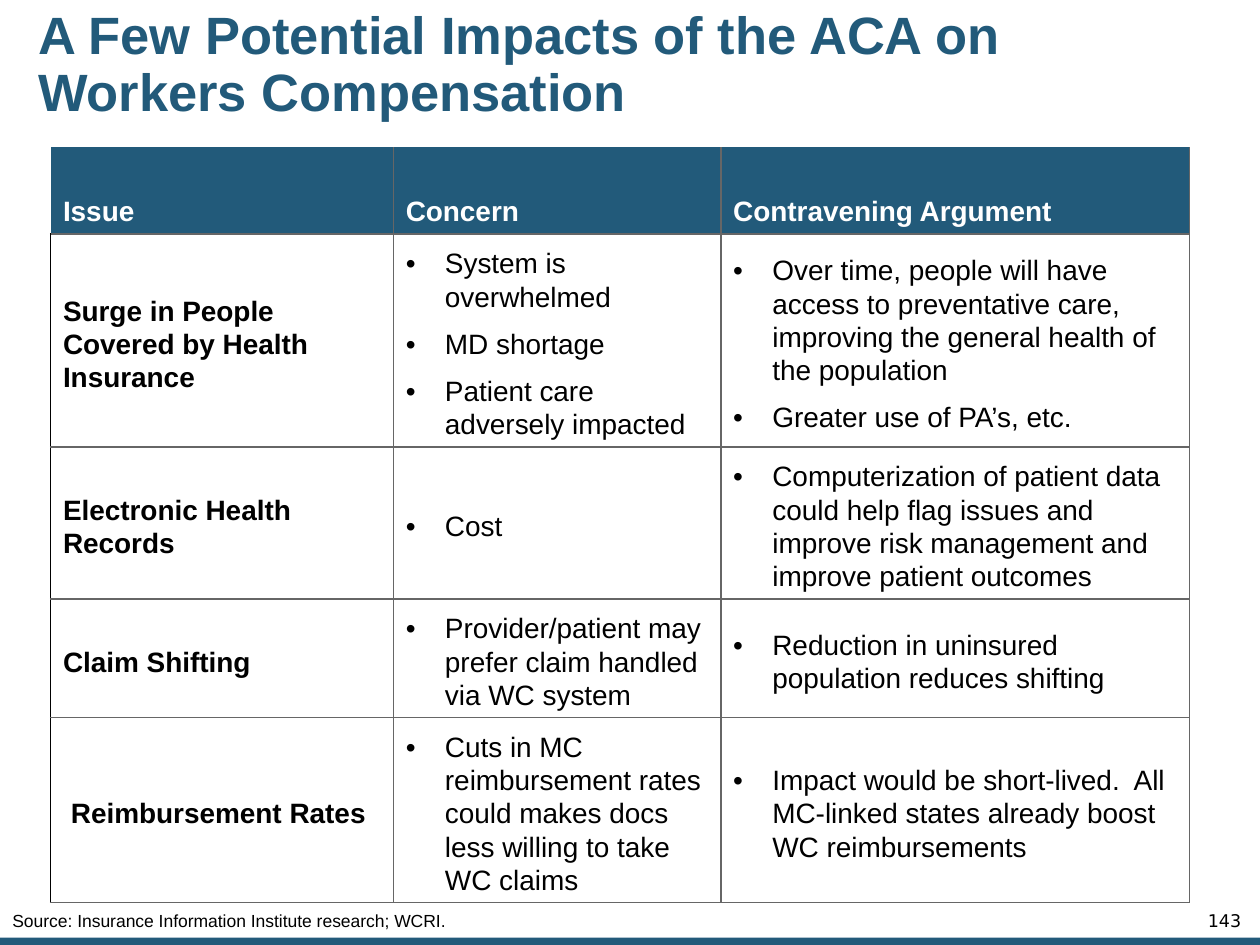
from lxml.etree import SubElement
from pptx import Presentation
from pptx.dml.color import RGBColor
from pptx.enum.shapes import MSO_SHAPE
from pptx.enum.text import MSO_ANCHOR as Anchor, PP_ALIGN as Align
from pptx.oxml.ns import qn
from pptx.util import Cm, Pt

COLORS = {"teal": "225A7A", "grey": "666666", "black": "000000", "white": "FFFFFF"}


def style_text(para, size, color, bold=False, name="Arial"):
    for span in para.runs:
        span.font.size = Pt(size)
        span.font.name = name
        span.font.bold = bold
        span.font.color.rgb = RGBColor.from_string(COLORS[color])


def set_border(cell, side, color):
    """Draw a 1 pt line on side L, R, T or B; no line if color is None."""
    line = SubElement(cell._tc.get_or_add_tcPr(), qn(f"a:ln{side}"), w=str(Pt(1)))
    if color is None:
        SubElement(line, qn("a:noFill"))
    else:
        fill = SubElement(line, qn("a:solidFill"))
        SubElement(fill, qn("a:srgbClr"), val=COLORS[color])


deck = Presentation()
deck.slide_width, deck.slide_height = Cm(25.4), Cm(19.05)
page = deck.slides.add_slide(deck.slide_layouts[6])

footer_bar = page.shapes.add_shape(MSO_SHAPE.RECTANGLE, 0, Cm(18.9), Cm(25.4), Cm(0.15))
footer_bar.shadow.inherit = False
footer_bar.fill.solid()
footer_bar.fill.fore_color.rgb = RGBColor.from_string(COLORS["teal"])
footer_bar.line.fill.background()

# Issue table: one list of bullets per concern and per argument
headings = ["Issue", "Concern", "Contravening Argument"]
issues = [
    ("Surge in People Covered by Health Insurance",
     ["System is overwhelmed", "MD shortage", "Patient care adversely impacted"],
     ["Over time, people will have access to preventative care, "
      "improving the general health of the population",
      "Greater use of PA’s, etc."]),
    ("Electronic Health Records",
     ["Cost"],
     ["Computerization of patient data could help flag issues and "
      "improve risk management and improve patient outcomes"]),
    ("Claim Shifting",
     ["Provider/patient may prefer claim handled via WC system"],
     ["Reduction in uninsured population reduces shifting"]),
    ("Reimbursement Rates",
     ["Cuts in MC reimbursement rates could makes docs less willing to take WC claims"],
     ["Impact would be short-lived.  All MC-linked states already boost "
      "WC reimbursements"]),
]
column_widths = [6.91, 6.6, 9.45]
row_heights = [1.75, 4.29, 3.06, 2.39, 3.73]
rows = [[[heading] for heading in headings]]
rows += [[[issue], concerns, arguments] for issue, concerns, arguments in issues]

table = page.shapes.add_table(len(rows), len(headings), Cm(1.02), Cm(2.97),
                              Cm(sum(column_widths)), Cm(sum(row_heights))).table
for column, width in zip(table.columns, column_widths):
    column.width = Cm(width)
for row, height in zip(table.rows, row_heights):
    row.height = Cm(height)

for row_index, row in enumerate(rows):
    is_header = row_index == 0
    for column_index, lines in enumerate(row):
        cell = table.cell(row_index, column_index)
        left = "grey" if column_index else None if is_header else "black"
        top = None if is_header else "grey"
        for side, color in zip("LRTB", (left, "grey", top, "grey")):
            set_border(cell, side, color)
        cell.fill.solid()
        cell.fill.fore_color.rgb = RGBColor.from_string(
            COLORS["teal" if is_header else "white"])
        cell.vertical_anchor = Anchor.BOTTOM if is_header else Anchor.MIDDLE
        cell.margin_left = cell.margin_right = cell.margin_top = Cm(0.25)
        cell.margin_bottom = Cm(0.13)
        cell.text_frame.text = "\n".join(lines)

        is_bulleted = column_index > 0 and not is_header
        for number, para in enumerate(cell.text_frame.paragraphs):
            if is_bulleted:
                properties = para._p.get_or_add_pPr()
                properties.set("marL", str(Cm(0.79)))
                properties.set("indent", str(-Cm(0.79)))
                SubElement(properties, qn("a:buFont"), typeface="Arial")
                SubElement(properties, qn("a:buChar"), char="•")
            para.line_spacing = Pt(19)
            para.space_before = Pt(8 if number else 0)
            style_text(para, 16, "white" if is_header else "black", not is_bulleted)

# The last issue sits slightly further in
table.cell(len(issues), 0).margin_left = Cm(0.41)

captions = [
    (0, 9.73, "Source: Insurance Information Institute research; WCRI.", "Arial", Align.LEFT),
    (23.37, 1.9, "143", "DejaVu Sans", Align.RIGHT),
]
for left, width, text, font_name, alignment in captions:
    box = page.shapes.add_textbox(Cm(left), Cm(18.21), Cm(width), Cm(0.69))
    box.text_frame.word_wrap = True
    box.text_frame.vertical_anchor = Anchor.MIDDLE
    box.text_frame.text = text
    para = box.text_frame.paragraphs[0]
    para.alignment = alignment
    style_text(para, 10, "black", name=font_name)

title = page.shapes.add_textbox(Cm(0.64), Cm(0.2), Cm(20.9), Cm(2.26))
frame = title.text_frame
frame.word_wrap = True
frame.vertical_anchor = Anchor.MIDDLE
frame.margin_left = frame.margin_right = frame.margin_top = frame.margin_bottom = Cm(0.13)
frame.text = "A Few Potential Impacts of the ACA on Workers Compensation"
frame.paragraphs[0].line_spacing = 0.9
style_text(frame.paragraphs[0], 30, "teal", True)

deck.save("out.pptx")
